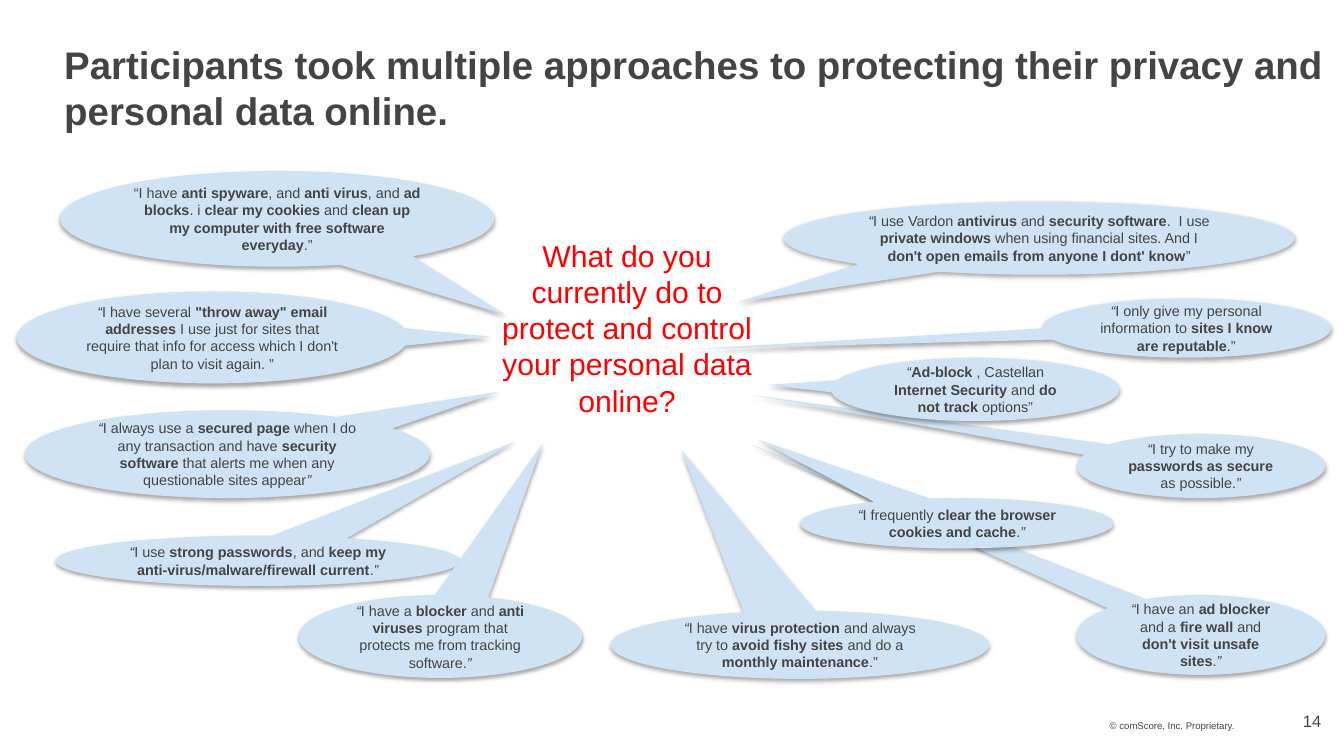
import pptx
import pptx.dml.color
import pptx.enum.shapes
import pptx.enum.text
import pptx.oxml
import pptx.oxml.ns
import pptx.util
from pptx.util import Inches

RGBColor = pptx.dml.color.RGBColor
ALIGN = pptx.enum.text.PP_ALIGN
ANCHOR = pptx.enum.text.MSO_ANCHOR
AUTO_SIZE = pptx.enum.text.MSO_AUTO_SIZE

GREY = RGBColor(0x44, 0x44, 0x44)
RED = RGBColor(0xFF, 0x00, 0x00)
PALE_BLUE = RGBColor(0xD0, 0xE3, 0xF5)
FONT = "Arial"

SHADOW = (
    '<a:outerShdw %s blurRad="%d" dist="%d" dir="5400000" rotWithShape="0">'
    '<a:srgbClr val="000000"><a:alpha val="35000"/></a:srgbClr></a:outerShdw>'
    % (pptx.oxml.ns.nsdecls("a"), pptx.util.Pt(3.1), pptx.util.Pt(1.8))
)

# (left, top, width, height), pointer tip, quote; * toggles bold, _ toggles italic
QUOTES = [
    ((0.25, 4.15, 4.1, 0.89), (0.669, -0.708),
     "_“_I always use a *secured page *when I do any transaction and have "
     "*security software* that alerts me when any questionable sites appear_”_"),
    ((0.56, 5.42, 4.1, 0.51), (0.636, -2.365),
     "_“_I use *strong passwords*, and "
     "*keep my anti-virus/malware/firewall current*._”_"),
    ((6.18, 6.18, 3.83, 0.69), (-0.313, -2.854),
     "_“_I have *virus protection *and always try to *avoid fishy sites *"
     "and do a *monthly maintenance*.”"),
    ((3.02, 6.02, 2.87, 0.84), (0.361, -2.324),
     "_“_I have a *blocker* and *anti viruses* program that protects me "
     "from tracking software._”_"),
    ((10.89, 6.02, 2.52, 0.81), (-1.803, -2.377),
     "_“_I have an *ad blocker *and a *fire wall *and "
     "*don't visit unsafe sites*._”_"),
    ((10.89, 4.39, 2.52, 0.65), (-1.801, -1.104),
     "_“_I try to make my *passwords as secure *as possible._”_"),
    ((10.54, 3.02, 2.93, 0.6), (-1.694, 0.353),
     "_“_I only give my personal information to "
     "*sites I know are reputable*.”"),
    ((8.1, 5.04, 3.17, 0.51), (-0.636, -1.659),
     "_“_I frequently *clear the browser cookies and cache*._”_"),
    ((8.41, 3.62, 2.92, 0.64), (-0.719, -0.07),
     "_“_*Ad-block* , Castellan *Internet Security *and *do not track *options”"),
    ((0.17, 2.95, 3.96, 0.93), (0.711, -0.008),
     '_“_I have several* "throw away" email addresses *I use just for sites '
     "that require that info for access which I don't plan to visit again. ”"),
    ((0.61, 1.73, 4.39, 0.97), (0.526, 1.001),
     "“I have *anti spyware*, and *anti virus*, and *ad blocks*. i "
     "*clear my cookies *and *clean up my computer with free software everyday*.”"),
    ((7.93, 2.04, 5.17, 0.74), (-0.59, 0.874),
     "_“_I use Vardon *antivirus* and *security software*.  I use "
     "*private windows *when using financial sites. And I "
     "*don't open emails from anyone I dont' know*”"),
]


def write_text(sp, text, size, color=GREY, bold=False, align=ALIGN.LEFT,
               anchor=ANCHOR.TOP, insets=(0.1, 0.05, 0.1, 0.05)):
    """Fill a shape with one paragraph; * toggles bold and _ toggles italic."""
    tf = sp.text_frame
    tf.word_wrap = True
    tf.auto_size = AUTO_SIZE.NONE
    tf.vertical_anchor = anchor
    tf.margin_left, tf.margin_top, tf.margin_right, tf.margin_bottom = map(Inches, insets)
    p = tf.paragraphs[0]
    p.alignment = align
    for i, bold_part in enumerate(text.split("*")):
        for j, part in enumerate(bold_part.split("_")):
            if not part:
                continue
            r = p.add_run()
            r.text = part
            r.font.name = FONT
            r.font.size = pptx.util.Pt(size)
            r.font.color.rgb = color
            r.font.bold = bold or i % 2 == 1
            r.font.italic = j % 2 == 1
    return p


def add_text(s, box, text, size, **text_format):
    sp = s.shapes.add_textbox(*map(Inches, box))
    write_text(sp, text, size, **text_format)
    return sp


def add_quote(s, box, tip, text):
    sp = s.shapes.add_shape(
        pptx.enum.shapes.MSO_SHAPE.OVAL_CALLOUT, *map(Inches, box))
    sp.adjustments[0], sp.adjustments[1] = tip
    sp.fill.solid()
    sp.fill.fore_color.rgb = PALE_BLUE
    sp.line.fill.background()
    sp.shadow.inherit = False
    effects = sp._element.spPr.find(pptx.oxml.ns.qn("a:effectLst"))
    effects.append(pptx.oxml.parse_xml(SHADOW))
    write_text(sp, text, 10.5, align=ALIGN.CENTER, anchor=ANCHOR.MIDDLE)


def set_title(s, text):
    title = s.shapes.title
    title.left, title.top, title.width, title.height = map(
        Inches, (0.53, 0.37, 13, 1.04))
    write_text(title, text, 28, bold=True, anchor=ANCHOR.BOTTOM,
               insets=(0.12, 0, 0.12, 0.06))


def add_footer(s):
    notice = add_text(s, (11.23, 6.95, 1.5, 0.51), "© comScore, Inc. Proprietary.", 7,
                      anchor=ANCHOR.BOTTOM, insets=(0, 0.06, 0, 0.06))
    notice.text_frame.paragraphs[0].line_spacing = pptx.util.Pt(7.9)
    add_text(s, (12.52, 7.06, 1.09, 0.4), "14", 12, align=ALIGN.RIGHT,
             anchor=ANCHOR.BOTTOM, insets=(0.24, 0.06, 0.24, 0.06))


def main():
    prs = pptx.Presentation()
    prs.slide_width, prs.slide_height = Inches(13.6), Inches(7.65)
    s = prs.slides.add_slide(prs.slide_layouts.get_by_name("Title Only"))
    set_title(s, "Participants took multiple approaches to protecting their "
                 "privacy and personal data online.")
    add_footer(s)
    for box, tip, text in QUOTES:
        add_quote(s, box, tip, text)
    question = add_text(
        s, (4.82, 2.35, 3.05, 1.95),
        "What do you currently do to protect and control your personal data online?",
        22, color=RED, align=ALIGN.CENTER)
    question.text_frame.auto_size = AUTO_SIZE.SHAPE_TO_FIT_TEXT
    prs.save("out.pptx")


if __name__ == "__main__":
    main()
